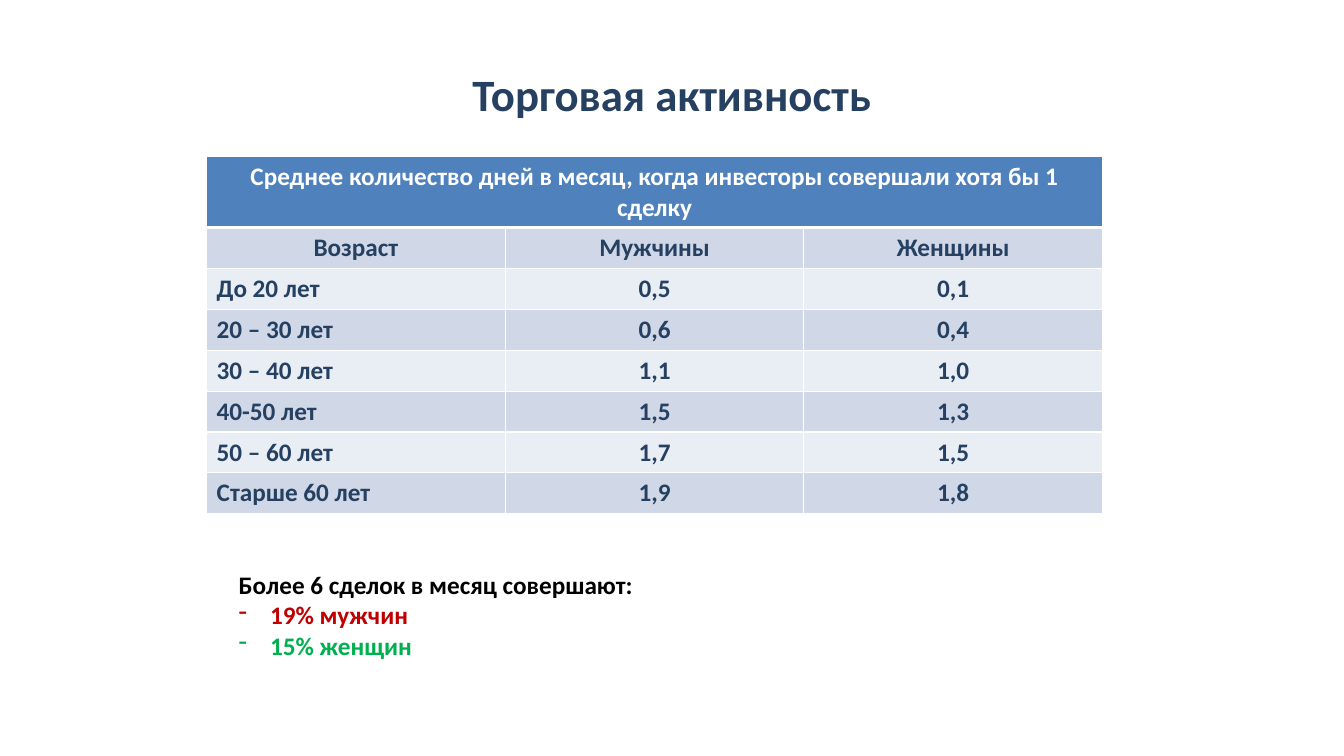
from dataclasses import dataclass

from lxml import etree
from pptx import Presentation
from pptx import util as u
from pptx.dml.color import RGBColor
from pptx.enum import text
from pptx.oxml import ns

LEFT, CENTER = text.PP_ALIGN.LEFT, text.PP_ALIGN.CENTER


@dataclass(frozen=True)
class Theme:
    font: str = "Calibri"
    title_size: int = 32
    body_size: int = 18
    navy: str = "254061"
    white: str = "FFFFFF"
    black: str = "000000"
    red: str = "C00000"
    green: str = "00B050"
    header_fill: str = "4F81BD"
    bands: tuple = ("D0D8E8", "E9EDF4")


class SlideBuilder:
    def __init__(self, slide, theme):
        self.slide = slide
        self.theme = theme

    def fill_para(self, para, content, color, size, align=LEFT):
        para.alignment = align
        span = para.add_run()
        span.text = content
        span.font.color.rgb = RGBColor.from_string(color)
        formats = {"name": self.theme.font, "size": u.Pt(size), "bold": True}
        for name, value in formats.items():
            setattr(span.font, name, value)

    def dash(self, para, indent):
        props = para._p.get_or_add_pPr()
        props.set("marL", str(u.Pt(indent)))
        props.set("indent", str(-u.Pt(indent)))
        etree.SubElement(props, ns.qn("a:buChar")).set("char", "-")

    def text_box(self, area, lines, size, align=LEFT, anchor=text.MSO_ANCHOR.TOP):
        """Each line is (content, color, dash indent)."""
        box = self.slide.shapes.add_textbox(*map(u.Pt, area))
        frame = box.text_frame
        frame.word_wrap = True
        frame.vertical_anchor = anchor
        for number, (content, color, indent) in enumerate(lines):
            para = frame.add_paragraph() if number else frame.paragraphs[0]
            self.fill_para(para, content, color, size, align)
            if indent:
                self.dash(para, indent)

    def borders(self, cell, widths):
        props = cell._tc.get_or_add_tcPr()
        for side, width in widths.items():
            line = etree.SubElement(props, ns.qn(f"a:ln{side}"), w=str(u.Pt(width)))
            fill = etree.SubElement(line, ns.qn("a:solidFill"))
            etree.SubElement(fill, ns.qn("a:srgbClr"), val=self.theme.white)

    def table(self, area, header, rows, header_height, row_height):
        theme = self.theme
        columns = len(rows[0])
        grid = self.slide.shapes.add_table(
            len(rows) + 1, columns, *map(u.Pt, area)).table
        for number, row in enumerate(grid.rows):
            row.height = u.Pt(row_height if number else header_height)

        # Fills and borders, with a thick line under the header
        for number, row in enumerate(grid.rows):
            for cell in row.cells:
                self.borders(cell, {"L": 1, "R": 1, "T": 3 if number == 1 else 1,
                                    "B": 1 if number else 3})
                color = theme.bands[(number - 1) % 2] if number else theme.header_fill
                cell.fill.solid()
                cell.fill.fore_color.rgb = RGBColor.from_string(color)

        # Header across all columns
        title = grid.cell(0, 0)
        title.merge(grid.cell(0, columns - 1))
        self.fill_para(title.text_frame.paragraphs[0], header, theme.white,
                       theme.body_size, CENTER)

        # Column names and values; only the age groups are left-aligned
        for number, row in enumerate(rows, 1):
            for column, content in enumerate(row):
                align = LEFT if number > 1 and column == 0 else CENTER
                para = grid.cell(number, column).text_frame.paragraphs[0]
                self.fill_para(para, content, theme.navy, theme.body_size, align)


ACTIVITY = [
    ("Возраст", "Мужчины", "Женщины"),
    ("До 20 лет", "0,5", "0,1"),
    ("20 – 30 лет", "0,6", "0,4"),
    ("30 – 40 лет", "1,1", "1,0"),
    ("40-50 лет", "1,5", "1,3"),
    ("50 – 60 лет", "1,7", "1,5"),
    ("Старше 60 лет", "1,9", "1,8"),
]


def main():
    deck = Presentation()
    deck.slide_width, deck.slide_height = u.Pt(960), u.Pt(540)
    theme = Theme()
    page = SlideBuilder(deck.slides.add_slide(deck.slide_layouts[6]), theme)

    # Title
    page.text_box((48, 21.6, 864, 90), [("Торговая активность", theme.navy, 0)],
                  theme.title_size, CENTER, text.MSO_ANCHOR.MIDDLE)

    # Trading days by age and sex
    page.table((147.6, 111.6, 640, 255),
               "Среднее количество дней в месяц, когда инвесторы совершали хотя бы 1 сделку",
               ACTIVITY, header_height=51, row_height=29.2)

    # Most active investors
    page.text_box((163.4, 403.2, 638.6, 72.7), [
        ("Более 6 сделок в месяц совершают:", theme.black, 0),
        ("19% мужчин", theme.red, 22.5),
        ("15% женщин", theme.green, 22.5),
    ], theme.body_size)

    deck.save("out.pptx")


if __name__ == "__main__":
    main()
